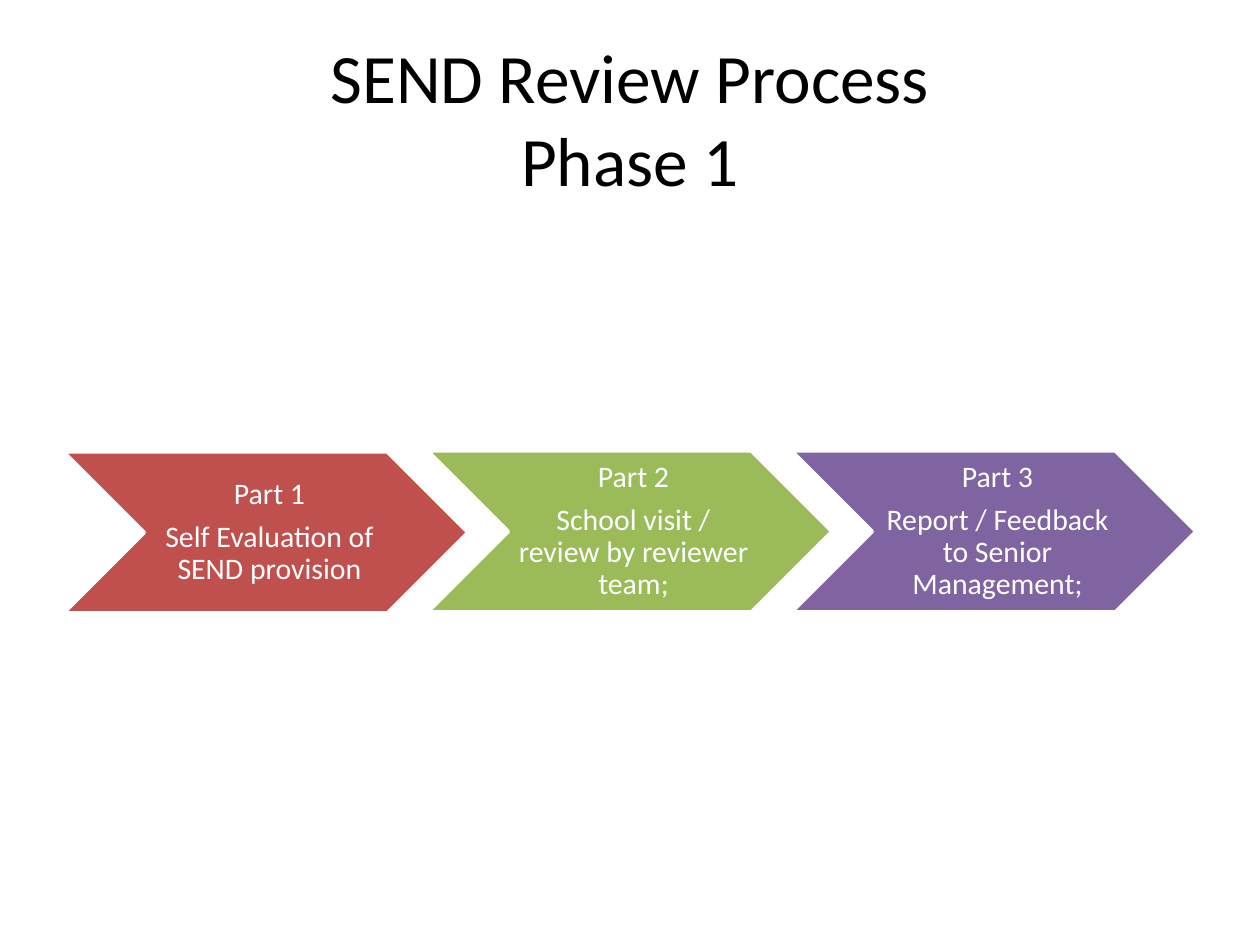
from pptx import Presentation
from pptx.dml.color import RGBColor
from pptx.enum.shapes import MSO_SHAPE
from pptx.enum.text import MSO_ANCHOR, PP_ALIGN
from pptx.util import Pt

CHEVRON = MSO_SHAPE.CHEVRON
MIDDLE = MSO_ANCHOR.MIDDLE
CENTER = PP_ALIGN.CENTER
SCALE = 914400 / 126

STEPS = [
    ("C0504D", 452, ["Part 1", "Self Evaluation of SEND provision"]),
    ("9BBB59", 451, ["Part 2", "School visit / review by reviewer team;"]),
    ("8064A2", 451, ["Part 3", "Report / Feedback to Senior Management;"]),
]
FIRST_LEFT, STEP_PITCH = 64, 364
STEP_WIDTH, STEP_HEIGHT = 404, 161
LABEL_INDENT, LABEL_WIDTH = 81, 243


def emu(px):
    return round(px * SCALE)


def color(value):
    return RGBColor.from_string(value)


def apply(target, values):
    for name, value in values.items():
        setattr(target, name, value)


class SlideBuilder:
    """Draws styled elements on the current slide."""

    font = "Calibri"

    def __init__(self, deck):
        self.page = deck.slides.add_slide(deck.slide_layouts[6])

    def text(self, left, top, width, height, lines, size, ink, insets, para_format):
        box = self.page.shapes.add_textbox(*map(emu, (left, top, width, height)))
        frame = box.text_frame
        margins = ("margin_left", "margin_top", "margin_right", "margin_bottom")
        apply(frame, {"word_wrap": True, "vertical_anchor": MIDDLE})
        apply(frame, dict(zip(margins, map(emu, insets))))
        for index, line in enumerate(lines):
            para = frame.add_paragraph() if index else frame.paragraphs[0]
            para.text = line
            apply(para, {"alignment": CENTER, **para_format})
            for span in para.runs:
                apply(span.font, {"name": self.font, "size": Pt(size)})
                span.font.color.rgb = color(ink)

    def chevron(self, left, top, width, height, fill):
        shape = self.page.shapes.add_shape(CHEVRON, *map(emu, (left, top, width, height)))
        shape.shadow.inherit = False
        shape.fill.solid()
        shape.fill.fore_color.rgb = color(fill)
        shape.line.color.rgb = color("FFFFFF")
        shape.line.width = Pt(2)


def main():
    deck = Presentation()
    apply(deck, {"slide_width": emu(1260), "slide_height": emu(945)})
    slide = SlideBuilder(deck)
    slide.text(63, 38, 1134, 158, ["SEND Review Process\vPhase 1"],
               39.6, "000000", (13, 6, 13, 6), {})
    label_format = {"line_spacing": 0.9, "space_after": Pt(6)}
    for index, (fill, top, lines) in enumerate(STEPS):
        left = FIRST_LEFT + index * STEP_PITCH
        slide.chevron(left, top, STEP_WIDTH, STEP_HEIGHT, fill)
        slide.text(left + LABEL_INDENT, top, LABEL_WIDTH, STEP_HEIGHT, lines,
                   17, "FFFFFF", (9, 3, 3, 3), label_format)
    deck.save("out.pptx")


if __name__ == "__main__":
    main()
